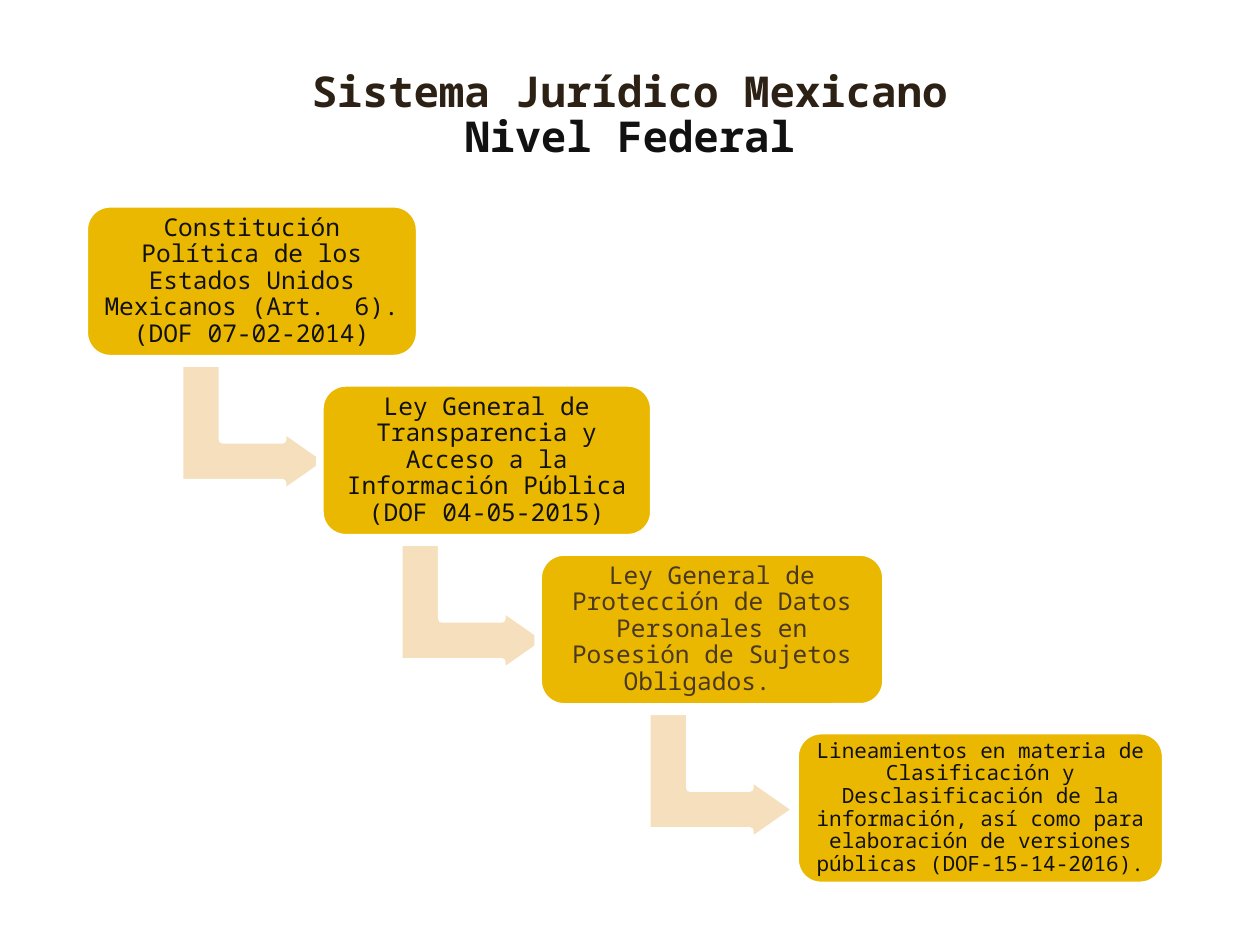
"""Build the slide of the Mexican federal legal hierarchy as a descending staircase."""
from pptx import Presentation
from pptx import util as u
from pptx.dml.color import RGBColor
from pptx.enum import shapes, text

COLORS = {"box": "EAB800", "arrow": "F5DFBD", "white": "FFFFFF",
          "title": "2C2114", "ink": "111111", "brown": "4B3822"}
FONT = "Noto Sans Mono"
BOX_HEIGHT, ARROW_DROP = 3.12, 3.02
STEPS = [
    (1.7, 4.11, 6.76, 3.81, 14, "ink",
     "Constitución Política de los Estados Unidos Mexicanos (Art.  6). (DOF 07-02-2014)"),
    (6.45, 7.72, 6.73, 8.23, 14, "ink",
     "Ley General de Transparencia y Acceso a la Información Pública (DOF 04-05-2015)"),
    (10.85, 11.13, 7.01, 13.23, 14, "brown",
     "Ley General de Protección de Datos Personales en Posesión de Sujetos Obligados.  "),
    (16.03, 14.73, 7.47, None, 12, "ink",
     "Lineamientos en materia de Clasificación y Desclasificación de la información, "
     "así como para elaboración de versiones públicas (DOF-15-14-2016)."),
]


def add_run(paragraph, words, size, color, bold=False):
    run = paragraph.add_run()
    run.text = words
    run.font.name = FONT
    run.font.size = u.Pt(size)
    run.font.bold = bold
    run.font.color.rgb = RGBColor.from_string(COLORS[color])


def add_block(kind, left, top, width, height, color):
    shape = slide.shapes.add_shape(kind, u.Cm(left), u.Cm(top), u.Cm(width), u.Cm(height))
    shape.shadow.inherit = False
    shape.fill.solid()
    shape.fill.fore_color.rgb = RGBColor.from_string(COLORS[color])
    shape.line.color.rgb = RGBColor.from_string(COLORS["white"])
    shape.line.width = u.Pt(4.33)
    return shape


presentation = Presentation()
presentation.slide_width, presentation.slide_height = u.Cm(25.4), u.Cm(19.05)
slide = presentation.slides.add_slide(presentation.slide_layouts[5])

title = slide.shapes.title
title.left, title.top, title.width, title.height = u.Cm(1.9), u.Cm(1.32), u.Cm(21.6), u.Cm(4.09)
title.text_frame.vertical_anchor = text.MSO_ANCHOR.TOP
paragraph = title.text_frame.paragraphs[0]
paragraph.alignment = text.PP_ALIGN.CENTER
paragraph.line_spacing = 0.88
add_run(paragraph, "Sistema Jurídico Mexicano", 24.3, "title", True)
paragraph.add_line_break()
add_run(paragraph, "Nivel Federal", 24.3, "ink", True)

for left, top, width, arrow_left, size, color, words in STEPS:
    if arrow_left is not None:
        arrow = add_block(shapes.MSO_SHAPE.BENT_UP_ARROW, arrow_left, top + ARROW_DROP,
                          2.64, 3.02, "arrow")
        arrow.rotation = 90
        for index, value in enumerate((0.328, 0.25, 0.358)):
            arrow.adjustments[index] = value

    box = add_block(shapes.MSO_SHAPE.ROUNDED_RECTANGLE, left, top, width, BOX_HEIGHT, "box")
    frame = box.text_frame
    frame.word_wrap = True
    frame.vertical_anchor = text.MSO_ANCHOR.MIDDLE
    inset = u.Cm(size / 100)
    frame.margin_left = frame.margin_right = frame.margin_top = frame.margin_bottom = inset
    paragraph = frame.paragraphs[0]
    paragraph.alignment = text.PP_ALIGN.CENTER
    paragraph.line_spacing = 0.9
    add_run(paragraph, words, size, color)

presentation.save("out.pptx")
